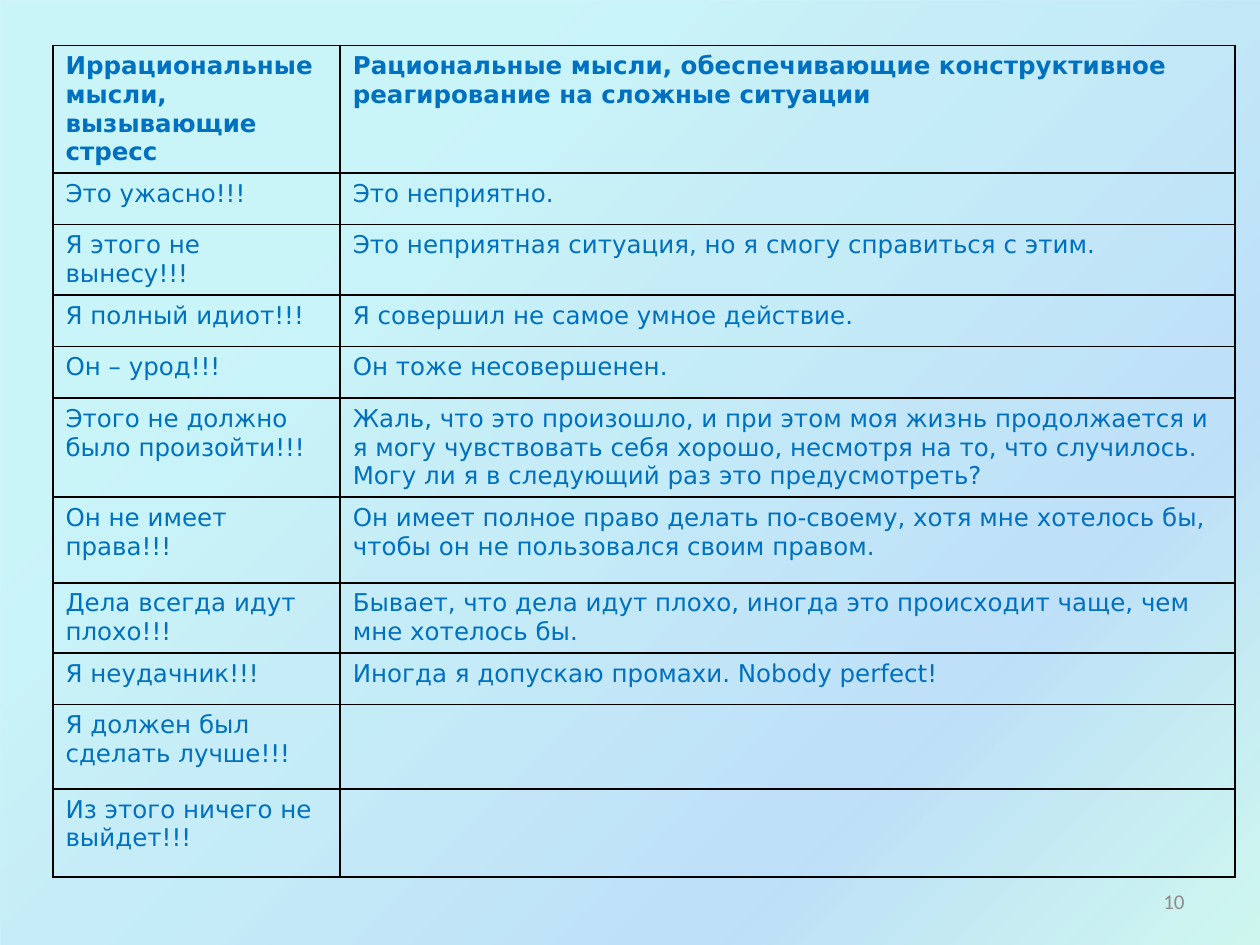
from lxml import etree
from pptx import Presentation
from pptx import util as u
from pptx.dml.color import RGBColor
from pptx.enum import shapes, text
from pptx.oxml import ns

BLUE = RGBColor(0x00, 0x70, 0xC0)
GRAY = RGBColor(0x8C, 0x8C, 0x8C)
BLACK = RGBColor(0x00, 0x00, 0x00)
BACKDROP_STOPS = [
    (25, RGBColor(0x21, 0xD6, 0xE0), 23),
    (75, RGBColor(0x00, 0x87, 0xE6), 25),
    (100, RGBColor(0x03, 0xD4, 0xA8), 18),
    (100, RGBColor(0x00, 0x5C, 0xBF), 26),
]
COLUMN_WIDTHS = [2.28, 7.1]
THOUGHTS = [
    (0.67, "Иррациональные мысли, вызывающие стресс",
     "Рациональные мысли, обеспечивающие конструктивное реагирование на сложные ситуации"),
    (0.41, "Это ужасно!!!", "Это неприятно."),
    (0.41, "Я этого не вынесу!!!", "Это неприятная ситуация, но я смогу справиться с этим."),
    (0.41, "Я полный идиот!!!", "Я совершил не самое умное действие."),
    (0.41, "Он – урод!!!", "Он тоже несовершенен."),
    (0.72, "Этого не должно было произойти!!!",
     "Жаль, что это произошло, и при этом моя жизнь продолжается и я могу чувствовать себя "
     "хорошо, несмотря на то, что случилось. Могу ли я в следующий раз это предусмотреть?"),
    (0.68, "Он не имеет права!!!",
     "Он имеет полное право делать по-своему, хотя мне хотелось бы, "
     "чтобы он не пользовался своим правом."),
    (0.41, "Дела всегда идут плохо!!!",
     "Бывает, что дела идут плохо, иногда это происходит чаще, чем мне хотелось бы."),
    (0.41, "Я неудачник!!!", "Иногда я допускаю промахи. Nobody perfect!"),
    (0.67, "Я должен был сделать лучше!!!", ""),
    (0.7, "Из этого ничего не выйдет!!!", ""),
]
PAGE = "10"


def add_element(parent, tag, **attributes):
    return etree.SubElement(parent, ns.qn(tag), **attributes)


def add_run(paragraph, words, face, size, color, bold=False):
    run = paragraph.add_run()
    run.text = words
    run.font.name = face
    run.font.size = u.Pt(size)
    run.font.bold = bold
    run.font.color.rgb = color


def add_backdrop(slide):
    backdrop = slide.shapes.add_shape(
        shapes.MSO_SHAPE.RECTANGLE, 0, 0, u.Inches(10), u.Inches(7.67))
    backdrop.shadow.inherit = False
    backdrop.line.fill.background()
    backdrop.fill.gradient()
    backdrop.fill.gradient_angle = 315
    stops = backdrop._element.spPr.find(ns.qn("a:gradFill")).find(ns.qn("a:gsLst"))
    for stop in list(stops):
        stops.remove(stop)
    for position, color, opacity in BACKDROP_STOPS:
        stop = add_element(stops, "a:gs", pos=str(position * 1000))
        tint = add_element(stop, "a:srgbClr", val=str(color))
        add_element(tint, "a:alpha", val=str(opacity * 1000))


def add_borders(cell):
    properties = cell._tc.get_or_add_tcPr()
    for side in ("L", "R", "T", "B"):
        border = add_element(properties, f"a:ln{side}", w=str(u.Pt(1)))
        fill = add_element(border, "a:solidFill")
        add_element(fill, "a:srgbClr", val=str(BLACK))


def add_thoughts(slide):
    total_height = sum(height for height, *_ in THOUGHTS)
    table = slide.shapes.add_table(
        len(THOUGHTS), len(COLUMN_WIDTHS), u.Inches(0.42), u.Inches(0.36),
        u.Inches(sum(COLUMN_WIDTHS)), u.Inches(total_height)).table
    table.first_row = False
    table.horz_banding = False
    for column, width in zip(table.columns, COLUMN_WIDTHS):
        column.width = u.Inches(width)
    for index, (height, *thoughts) in enumerate(THOUGHTS):
        table.rows[index].height = u.Inches(height)
        for cell, thought in zip(table.rows[index].cells, thoughts):
            add_borders(cell)
            cell.fill.background()
            if thought:
                add_run(cell.text_frame.paragraphs[0], thought,
                        "DejaVu Sans", 14, BLUE, bold=index == 0)


def add_page_number(slide):
    frame = slide.shapes.add_textbox(
        u.Inches(7.17), u.Inches(6.95), u.Inches(2.33), u.Inches(0.4)).text_frame
    frame.word_wrap = True
    frame.vertical_anchor = text.MSO_ANCHOR.MIDDLE
    frame.paragraphs[0].alignment = text.PP_ALIGN.RIGHT
    add_run(frame.paragraphs[0], PAGE, "Calibri", 12, GRAY)


def main():
    deck = Presentation()
    deck.slide_width = u.Inches(10)
    deck.slide_height = u.Inches(7.5)
    slide = deck.slides.add_slide(deck.slide_layouts[6])
    add_backdrop(slide)
    add_thoughts(slide)
    add_page_number(slide)
    deck.save("out.pptx")


if __name__ == "__main__":
    main()
